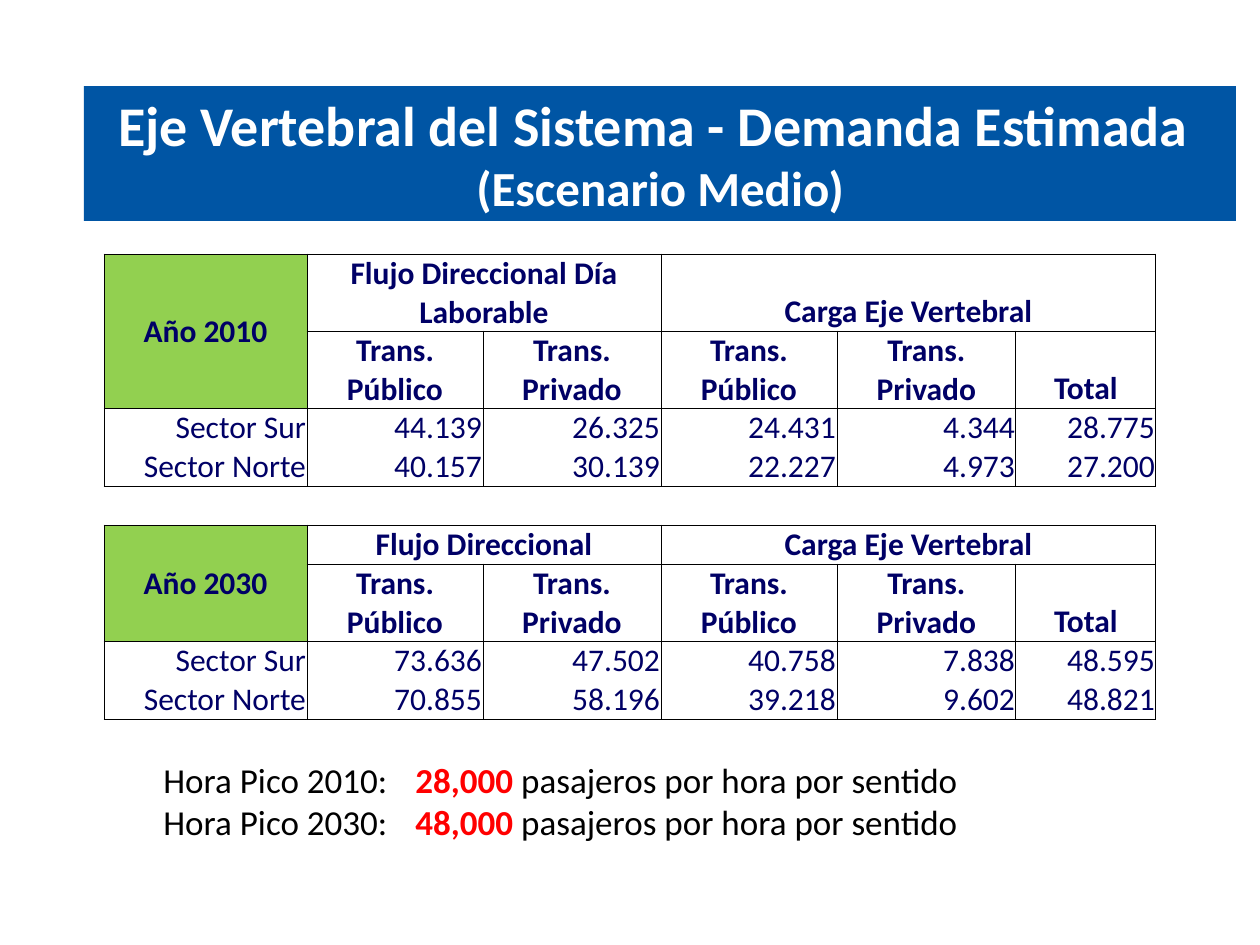
from dataclasses import dataclass

from lxml.etree import SubElement as Sub
from pptx import Presentation
from pptx.dml.color import RGBColor as Rgb
from pptx.enum.shapes import MSO_SHAPE as Shape
from pptx.enum.text import MSO_ANCHOR as Anchor, PP_ALIGN as Align
from pptx.oxml.ns import qn
from pptx.util import Emu, Pt


@dataclass(frozen=True)
class Theme:
    font: str = "Calibri"
    white: str = "FFFFFF"
    black: str = "000000"
    blue: str = "0055A4"
    navy: str = "000066"
    green: str = "92D050"
    red: str = "FF0000"
    head: int = 32
    sub: int = 28
    note: int = 20
    cell: int = 18
    rule: float = 0.5


T = Theme()
COLS = [203, 176, 178, 176, 179, 140]
TALL, LOW = 77, 39
MODES = ["Trans. Público", "Trans. Privado"]
YEARS = [
    ("Año 2010", "Flujo Direccional Día Laborable", TALL, [
        ["Sector Sur", "44.139", "26.325", "24.431", "4.344", "28.775"],
        ["Sector Norte", "40.157", "30.139", "22.227", "4.973", "27.200"],
    ]),
    ("Año 2030", "Flujo Direccional", LOW, [
        ["Sector Sur", "73.636", "47.502", "40.758", "7.838", "48.595"],
        ["Sector Norte", "70.855", "58.196", "39.218", "9.602", "48.821"],
    ]),
]
PEAKS = [("2010", "28,000"), ("2030", "48,000")]


def px(num):
    return Emu(round(num * 914400 / 126))


def style(font, size, tint=None, bold=None):
    font.name, font.size, font.bold = T.font, Pt(size), bold
    if tint:
        font.color.rgb = Rgb.from_string(tint)


def edge(cell, sides):
    props = cell._tc.get_or_add_tcPr()
    for side in "LRTB":
        line = Sub(props, qn(f"a:ln{side}"), w=str(Pt(T.rule)))
        if side in sides:
            fill = Sub(line, qn("a:solidFill"))
            Sub(fill, qn("a:srgbClr"), val=T.black)
        else:
            Sub(line, qn("a:noFill"))


def frame(cell, sides):
    cell.margin_left = cell.margin_right = cell.margin_top = px(1)
    cell.margin_bottom = 0
    edge(cell, sides)
    cell.fill.background()


def write(cell, text, align=Align.CENTER, bold=True):
    cell.text = text
    cell.vertical_anchor = Anchor.BOTTOM
    para = cell.text_frame.paragraphs[0]
    para.alignment = align
    style(para.font, T.cell, T.navy, bold)


def add_year(grid, top, year, flow, data):
    for first, last, text in [(1, 2, flow), (3, 5, "Carga Eje Vertebral")]:
        grid.cell(top, first).merge(grid.cell(top, last))
        write(grid.cell(top, first), text)
    for col, text in enumerate(MODES * 2 + ["Total"], 1):
        write(grid.cell(top + 1, col), text)
    label = grid.cell(top, 0)
    label.merge(grid.cell(top + 1, 0))
    write(label, year)
    label.vertical_anchor = Anchor.MIDDLE
    label.fill.solid()
    label.fill.fore_color.rgb = Rgb.from_string(T.green)
    for row, items in enumerate(data, top + 2):
        for col, text in enumerate(items):
            write(grid.cell(row, col), text, Align.RIGHT, False)


def add_grid(slide):
    block = [[tall, TALL, LOW, LOW] for _, _, tall, _ in YEARS]
    rows = block[0] + [LOW] + block[1]
    sides = ["LRTB", "LRTB", "LRT", "LRB", "TB"]
    grid = slide.shapes.add_table(
        len(rows), len(COLS), px(104), px(254), px(sum(COLS)), px(sum(rows))
    ).table
    grid.first_row = grid.horz_banding = False
    for col, wide in zip(grid.columns, COLS):
        col.width = px(wide)
    for num, (row, high) in enumerate(zip(grid.rows, rows)):
        row.height = px(high)
        for cell in row.cells:
            frame(cell, sides[num % len(sides)])
    for num, (year, flow, _, data) in enumerate(YEARS):
        add_year(grid, num * len(sides), year, flow, data)


def add_title(slide):
    bar = slide.shapes.add_shape(Shape.RECTANGLE, px(84), px(86), px(1152), px(135))
    bar.shadow.inherit = False
    bar.fill.solid()
    bar.fill.fore_color.rgb = Rgb.from_string(T.blue)
    bar.line.fill.background()
    body = bar.text_frame
    body.word_wrap = True
    body.vertical_anchor = Anchor.MIDDLE
    body.text = "Eje Vertebral del Sistema - Demanda Estimada \n(Escenario Medio)"
    for para, size in zip(body.paragraphs, [T.head, T.sub]):
        para.alignment = Align.CENTER
        style(para.font, size, T.white, True)


def add_peaks(slide):
    body = slide.shapes.add_textbox(px(151), px(752), px(935), px(97)).text_frame
    body.word_wrap = True
    for num, (year, load) in enumerate(PEAKS):
        para = body.add_paragraph() if num else body.paragraphs[0]
        style(para.font, T.note)
        for text, tint, bold in [
            (f"Hora Pico {year}:\t", T.black, False),
            (f"{load} ", T.red, True),
            ("pasajeros por hora por sentido", T.black, False),
        ]:
            run = para.add_run()
            run.text = text
            run.font.bold = bold
            run.font.color.rgb = Rgb.from_string(tint)


def main():
    deck = Presentation()
    deck.slide_width, deck.slide_height = px(1260), px(945)
    slide = deck.slides.add_slide(deck.slide_layouts[6])
    add_title(slide)
    add_peaks(slide)
    add_grid(slide)
    deck.save("out.pptx")


if __name__ == "__main__":
    main()
